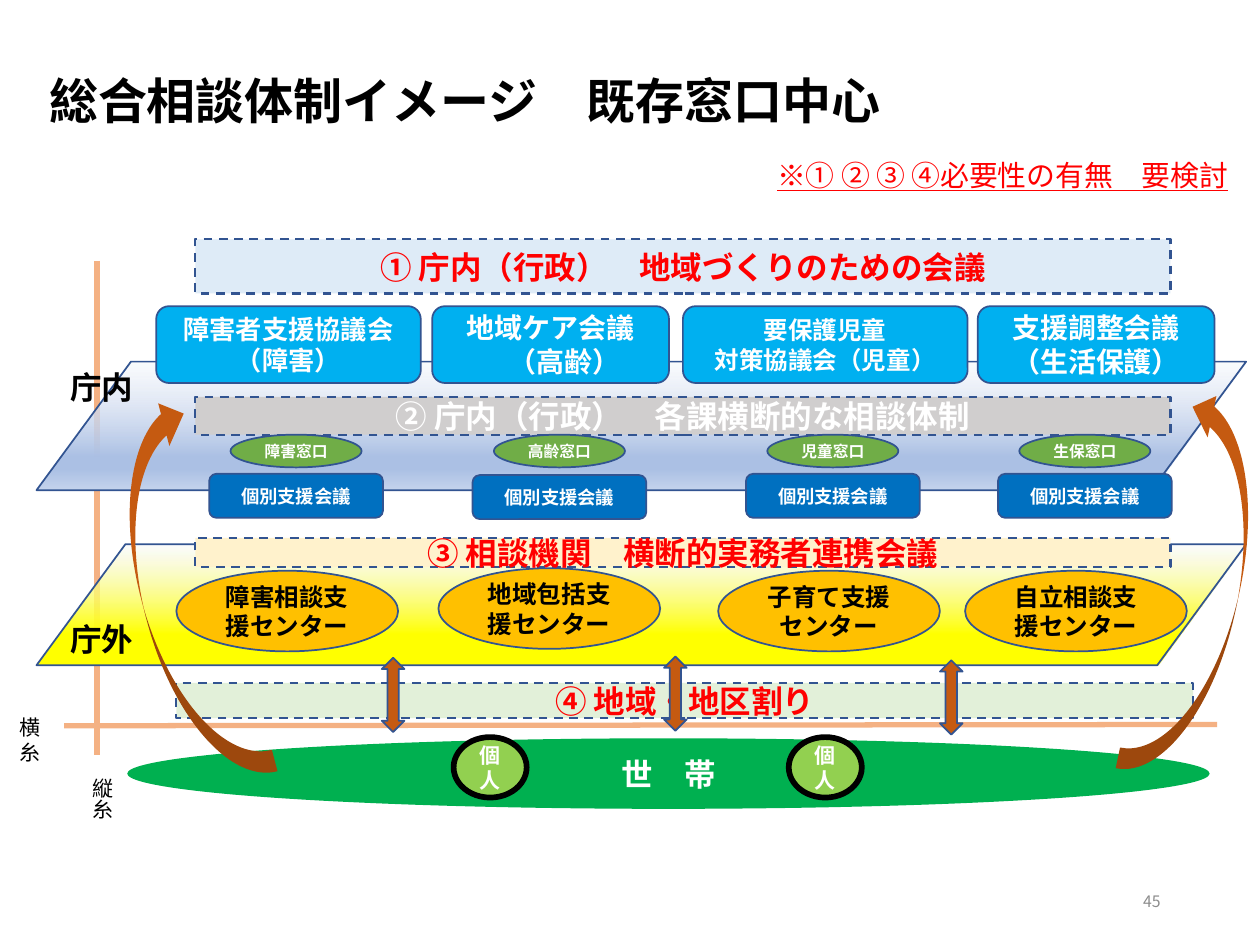
from lxml.etree import SubElement
from pptx import Presentation
from pptx.dml.color import RGBColor
from pptx.enum.dml import MSO_LINE
from pptx.enum.shapes import MSO_CONNECTOR, MSO_SHAPE
from pptx.enum.text import MSO_ANCHOR, MSO_AUTO_SIZE, PP_ALIGN
from pptx.oxml.ns import qn
from pptx.util import Inches, Pt

SANS, LATIN = "Noto Sans CJK JP", "Arial"
OUTLINE, WHITE, BLACK, RED = "325491", "FFFFFF", "000000", "FF0000"
BROWN, THREAD = "C55A11", "F4B183"

TITLE = "総合相談体制イメージ　既存窓口中心"
REMARK = "※① ② ③ ④必要性の有無　要検討"
CASE_MEETING = "個別支援会議"

COUNCILS = [
    (2.29, 2.1, 15, ["障害者支援協議会", "（障害）"]),
    (4.37, 1.88, 16, ["地域ケア会議", "　（高齢）"]),
    (6.55, 2.26, 14, ["要保護児童", "対策協議会（児童）"]),
    (8.7, 1.88, 16, ["支援調整会議", "（生活保護）"]),
]
DESKS = [
    (2.35, 3.76, "障害窓口"),
    (4.44, 3.77, "高齢窓口"),
    (6.61, 3.76, "児童窓口"),
    (8.61, 3.76, "生保窓口"),
]
CENTERS = [
    (2.28, 4.53, "障害相談支援センター"),
    (4.36, 4.51, "地域包括支援センター"),
    (6.58, 4.53, "子育て支援センター"),
    (8.54, 4.53, "自立相談支援センター"),
]
LAYERS = {
    "庁内": (2.87, 1.02, ["ABC0E4", "ABC0E4", "C7D5ED"]),
    "庁外": (4.32, 0.96, ["FFFF00"] * 3),
}
LAYER_LABELS = [("庁内", 2.87), ("庁外", 4.87)]
DISTRICT_BAND = ((1.4, 5.42, 8.07, 0.28), "E2F0D9", RED, "④ 地域・地区割り")
MEETING_BAND = ((1.55, 1.9, 7.74, 0.43), "DEEBF7", RED,
                "① 庁内（行政）　地域づくりのための会議")
CROSS_BANDS = [
    ((1.55, 3.15, 7.74, 0.3), "D0CECE", WHITE,
     "② 庁内（行政）　各課横断的な相談体制"),
    ((1.55, 4.27, 7.74, 0.23), "FFF2CC", RED,
     "③ 相談機関　横断的実務者連携会議"),
]
THREADS = [((0.77, 2.07), (0.77, 5.99)), ((0.51, 5.76), (9.66, 5.75))]
PERSONS = [3.6, 6.26]
RETURN_ARROWS = [((1.12, 3.15, 0.7, 3.11), 165.3, True),
                 ((9.17, 3.1, 0.67, 3.1), 192, False)]
EXCHANGES = [(3.03, 5.22), (5.27, 5.21), (7.46, 5.24)]

prs = Presentation()
prs.slide_width, prs.slide_height = Inches(10), Inches(7.5)
slide = prs.slides.add_slide(prs.slide_layouts[5])


def color(value):
    return RGBColor.from_string(value)


def write(holder, lines, size, ink, bold=True, face=SANS, align=PP_ALIGN.CENTER,
          anchor=MSO_ANCHOR.MIDDLE):
    frame = holder.text_frame
    frame.word_wrap = True
    frame.vertical_anchor = anchor
    frame.text = "\n".join(lines)
    for paragraph in frame.paragraphs:
        paragraph.alignment = align
        font = paragraph.font
        font.size, font.bold, font.name = Pt(size), bold, face
        font.color.rgb = color(ink)
        properties = paragraph._p.pPr.find(qn("a:defRPr"))
        SubElement(properties, qn("a:ea")).set("typeface", SANS)
    return frame


def block(kind, box, fill, line=OUTLINE, weight=1):
    shape = slide.shapes.add_shape(kind, *map(Inches, box))
    shape.shadow.inherit = False
    if fill:
        shape.fill.solid()
        shape.fill.fore_color.rgb = color(fill)
    if line:
        shape.line.color.rgb = color(line)
        shape.line.width = Pt(weight)
    else:
        shape.line.fill.background()
    return shape


def label(box, text, size, ink=BLACK, bold=False, face=LATIN,
          align=PP_ALIGN.LEFT, anchor=MSO_ANCHOR.TOP):
    holder = slide.shapes.add_textbox(*map(Inches, box))
    return write(holder, [text], size, ink, bold, face, align, anchor)


def band(box, fill, ink, text):
    strip = block(MSO_SHAPE.RECTANGLE, box, fill, weight=1.25)
    strip.line.dash_style = MSO_LINE.DASH
    write(strip, [text], 18, ink)


def layer(name):
    top, height, tones = LAYERS[name]
    plane = block(MSO_SHAPE.PARALLELOGRAM, (0.29, top, 9.6, height), None)
    plane.adjustments[0] = 0.735
    plane.fill.gradient()
    plane.fill.gradient_angle = 270
    stops = plane._element.spPr.find(qn("a:gradFill")).find(qn("a:gsLst"))
    for stop in list(stops):
        stops.remove(stop)
    for position, tone in zip((0, 74, 83, 100), ["F6F8FC"] + tones):
        stop = SubElement(stops, qn("a:gs"), pos=str(position * 1000))
        shade = SubElement(stop, qn("a:srgbClr"), val=tone)
        if position == 0:
            SubElement(shade, qn("a:alpha"), val="52000")


def centered(middle, top, width, height):
    return middle - width / 2, top, width, height


for start, end in THREADS:
    thread = slide.shapes.add_connector(
        MSO_CONNECTOR.STRAIGHT, *map(Inches, start + end))
    thread.line.color.rgb = color(THREAD)
    thread.line.width = Pt(3)
    SubElement(thread._element.spPr, qn("a:effectLst"))

band(*DISTRICT_BAND)
layer("庁内")
label((7.06, 6.95, 2.25, 0.4), "45", 9, "8C8C8C", face=SANS,
      align=PP_ALIGN.RIGHT, anchor=MSO_ANCHOR.MIDDLE)

title = slide.shapes.title
title.left, title.top, title.width, title.height = map(
    Inches, (0.29, 0.56, 7.12, 0.53))
heading = write(title, [TITLE], 28, BLACK, align=PP_ALIGN.LEFT)
heading.auto_size = MSO_AUTO_SIZE.NONE
heading.paragraphs[0].line_spacing = 0.9

for middle, width, size, lines in COUNCILS:
    council = block(MSO_SHAPE.ROUNDED_RECTANGLE,
                    centered(middle, 2.43, width, 0.61), "00B0F0")
    write(council, lines, size, WHITE)

for middle, top, desk_name in DESKS:
    meeting = block(MSO_SHAPE.ROUNDED_RECTANGLE,
                    centered(middle, top, 1.38, 0.35), "0070C0")
    write(meeting, [CASE_MEETING], 10.5, WHITE)

band(*MEETING_BAND)
layer("庁外")

for middle, top, center_name in CENTERS:
    center = block(MSO_SHAPE.OVAL, centered(middle, top, 1.76, 0.64), "FFC000")
    write(center, [center_name], 14, BLACK)

for name, top in LAYER_LABELS:
    label((0.46, top, 0.72, 0.4), name, 18, bold=True, face=SANS)

household = block(MSO_SHAPE.OVAL, (1.01, 5.86, 8.59, 0.56), "00B050", None)
write(household, ["世　帯"], 18, WHITE)
for left in PERSONS:
    person = block(MSO_SHAPE.OVAL, (left, 5.85, 0.58, 0.48), "92D050", BLACK, 3.25)
    write(person, ["個人"], 12, WHITE)

for box, turn, mirrored in RETURN_ARROWS:
    return_arrow = block(MSO_SHAPE.CURVED_RIGHT_ARROW, box, BROWN, None)
    return_arrow.rotation = turn
    if mirrored:
        return_arrow._element.spPr.find(qn("a:xfrm")).set("flipH", "1")

for left, top in EXCHANGES:
    block(MSO_SHAPE.UP_DOWN_ARROW, (left, top, 0.18, 0.59), BROWN)

remark = label((6.07, 1.2, 3.8, 0.38), REMARK, 16.5, RED)
remark.word_wrap = False
remark.paragraphs[0].font.underline = True

for cross_band in CROSS_BANDS:
    band(*cross_band)

for middle, top, desk_name in DESKS:
    desk = block(MSO_SHAPE.OVAL, centered(middle, 3.45, 1.04, 0.26), "70AD47")
    write(desk, [desk_name], 9, WHITE)

warp = label((0.56, 6.08, 0.4, 0.58), "縦糸", 12)
warp._txBody.bodyPr.set("vert", "eaVert")
label((0.06, 5.62, 0.52, 0.5), "横糸", 12)

prs.save("out.pptx")
